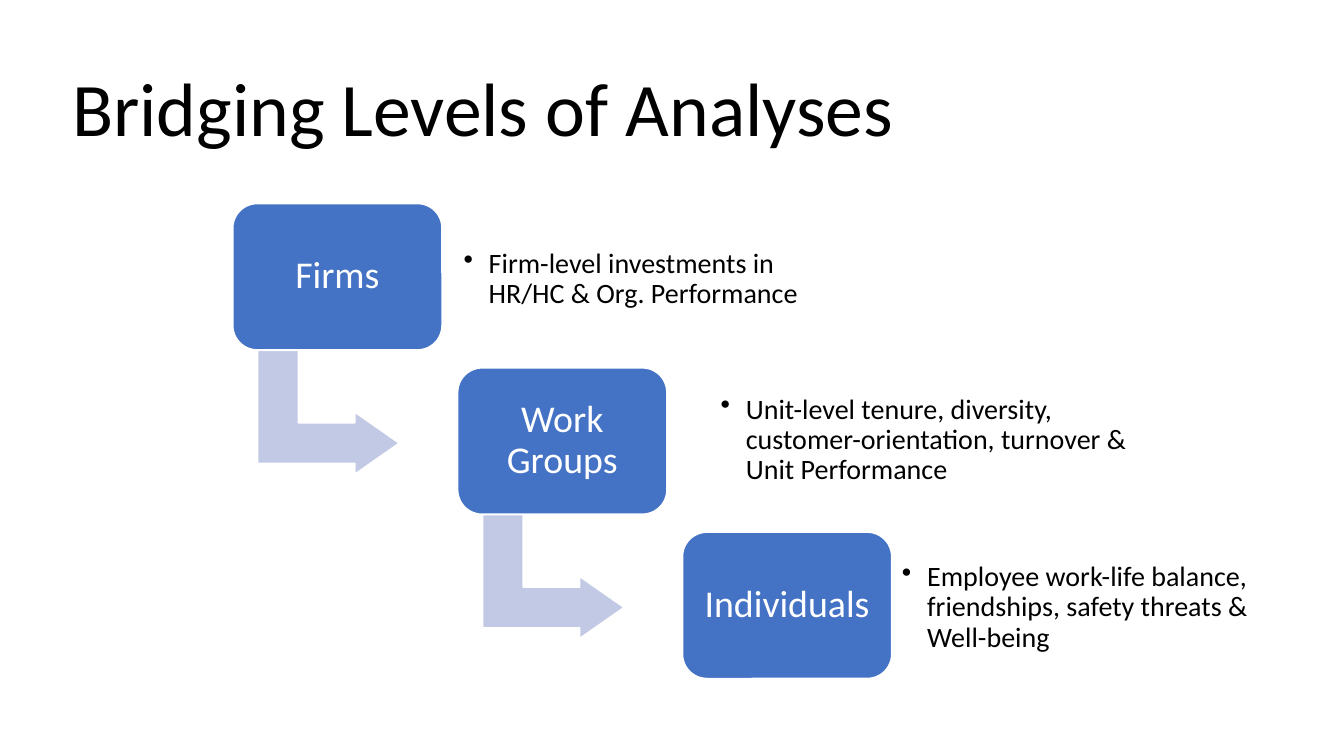
"""Build a slide of three stepped levels of analysis with notes beside them."""
from dataclasses import dataclass
from typing import Any

import lxml.etree
import pptx
import pptx.dml.color
import pptx.enum.shapes
import pptx.enum.text
import pptx.oxml.ns
import pptx.util

Inches = pptx.util.Inches
Align = pptx.enum.text.PP_ALIGN
Preset = pptx.enum.shapes.MSO_SHAPE


@dataclass(frozen=True)
class Theme:
    font: str = "Calibri"
    card: str = "4472C4"
    arrow: str = "C1C9E4"
    light: str = "FFFFFF"
    dark: str = "000000"
    title_size: int = 54
    card_size: int = 27
    note_size: int = 20


@dataclass(frozen=True)
class Grid:
    left: float = 2.31
    top: float = 2.02
    column: float = 2.23
    row: float = 1.63

    def frame(self, area: "Area") -> dict[str, int]:
        return {
            "left": Inches(self.left + area.column * self.column),
            "top": Inches(self.top + area.row * self.row),
            "width": Inches(area.columns * self.column),
            "height": Inches(area.rows * self.row),
        }


@dataclass(frozen=True)
class Area:
    column: float
    row: float
    columns: float
    rows: float


@dataclass(frozen=True)
class Level:
    name: str
    note: str
    note_area: Area
    note_inset: float


THEME = Theme()
GRID = Grid()
TITLE_AREA = Area(-0.76, -0.81, 5.5, 0.5)
LEVELS = (
    Level("Firms", "Firm-level investments in HR/HC & Org. Performance",
          Area(0.99, 0.1, 1.62, 0.72), 0.08),
    Level("Work Groups",
          "Unit-level tenure, diversity, customer-orientation, turnover & Unit Performance",
          Area(2.12, 1.08, 2.1, 0.72), 0.11),
    Level("Individuals",
          "Employee work-life balance, friendships, safety threats & Well-being",
          Area(2.94, 2.1, 1.7, 0.72), 0.08),
)


def apply(target: Any, values: dict[str, Any]) -> None:
    for name, value in values.items():
        setattr(target, name, value)


def write(shape: Any, text: str, size: int, color: str, align: Any, inset: float) -> Any:
    frame = shape.text_frame
    frame.text = text
    apply(frame, {
        "word_wrap": True,
        "auto_size": pptx.enum.text.MSO_AUTO_SIZE.NONE,
        "vertical_anchor": pptx.enum.text.MSO_ANCHOR.MIDDLE,
        "margin_left": Inches(inset),
        "margin_right": Inches(inset),
        "margin_top": Inches(inset),
        "margin_bottom": Inches(inset),
    })
    paragraph = frame.paragraphs[0]
    apply(paragraph, {"alignment": align, "line_spacing": 0.9})
    font = paragraph.runs[0].font
    apply(font, {"name": THEME.font, "size": pptx.util.Pt(size)})
    font.color.rgb = pptx.dml.color.RGBColor.from_string(color)
    return paragraph


def add_block(slide: Any, preset: Any, area: Area, fill: str, adjustments: tuple[float, ...]) -> Any:
    shape = slide.shapes.add_shape(preset, **GRID.frame(area))
    shape.shadow.inherit = False
    shape.fill.solid()
    shape.fill.fore_color.rgb = pptx.dml.color.RGBColor.from_string(fill)
    shape.line.color.rgb = pptx.dml.color.RGBColor.from_string(THEME.light)
    shape.line.width = pptx.util.Pt(1)
    for index, value in enumerate(adjustments):
        shape.adjustments[index] = value
    return shape


def add_note(slide: Any, level: Level) -> None:
    box = slide.shapes.add_textbox(**GRID.frame(level.note_area))
    paragraph = write(box, level.note, THEME.note_size, THEME.dark, Align.LEFT, level.note_inset)
    properties = paragraph._p.get_or_add_pPr()
    properties.set("marL", str(Inches(0.25)))
    properties.set("indent", str(Inches(-0.25)))
    bullet = lxml.etree.SubElement(properties, pptx.oxml.ns.qn("a:buChar"))
    bullet.set("char", "•")


def add_level(slide: Any, step: int, level: Level) -> None:
    if step < len(LEVELS) - 1:
        arrow_area = Area(step + 0.15, step + 0.84, 0.55, 0.86)
        arrow = add_block(slide, Preset.BENT_UP_ARROW, arrow_area, THEME.arrow, (0.328, 0.25, 0.358))
        arrow.rotation = 90
    card_area = Area(step, step, 0.93, 0.89)
    card = add_block(slide, Preset.ROUNDED_RECTANGLE, card_area, THEME.card, (0.167,))
    write(card, level.name, THEME.card_size, THEME.light, Align.CENTER, 0.11)
    add_note(slide, level)


def main() -> None:
    presentation = pptx.Presentation()
    apply(presentation, {"slide_width": Inches(13.33), "slide_height": Inches(7.5)})
    slide = presentation.slides.add_slide(presentation.slide_layouts.get_by_name("Title Only"))
    title = slide.shapes.title
    apply(title, GRID.frame(TITLE_AREA))
    write(title, "Bridging Levels of Analyses", THEME.title_size, THEME.dark, Align.LEFT, 0.1)
    for step, level in enumerate(LEVELS):
        add_level(slide, step, level)
    presentation.save("out.pptx")


if __name__ == "__main__":
    main()
